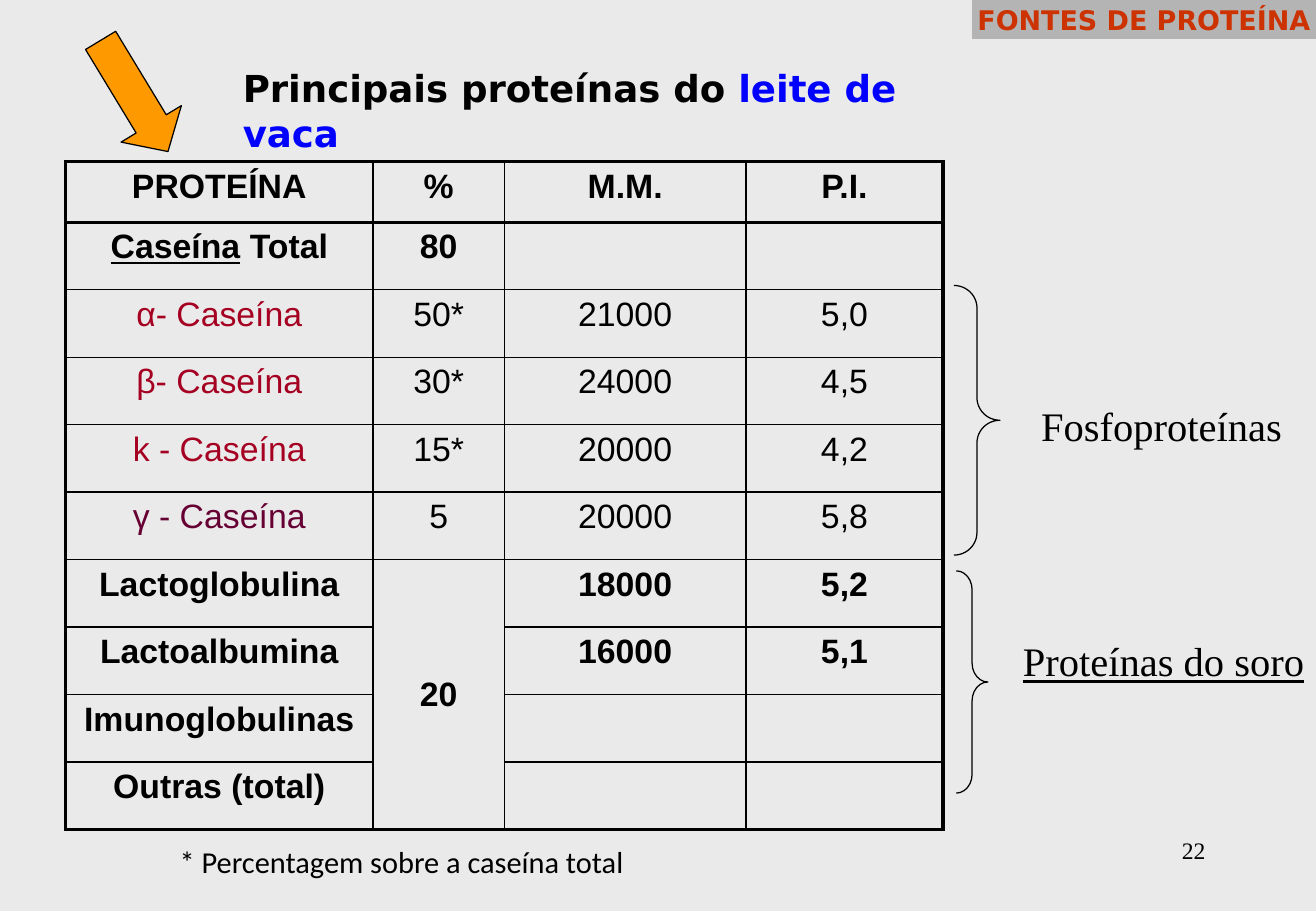
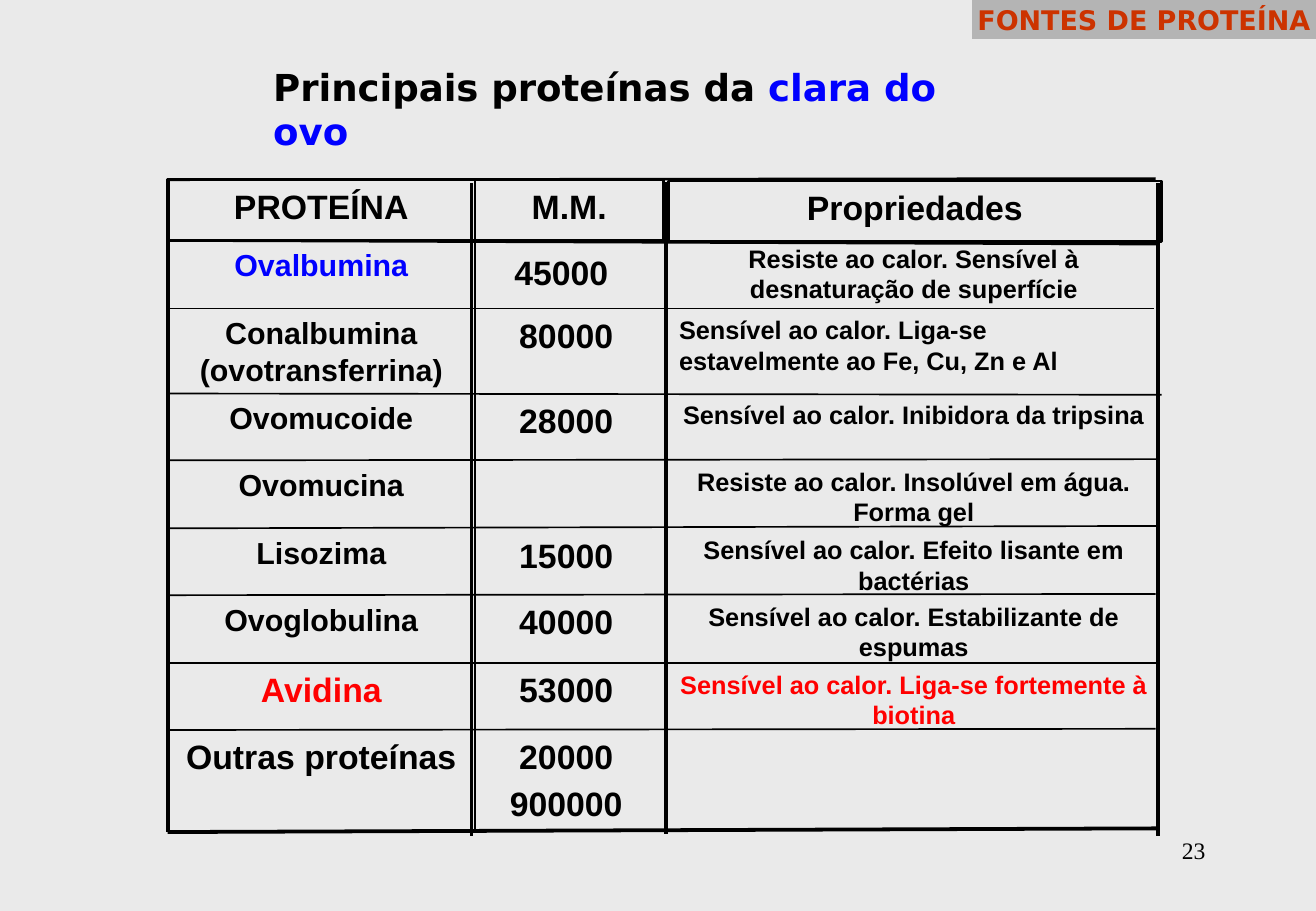
from dataclasses import dataclass

from lxml.etree import SubElement
from pptx import Presentation
from pptx.dml.color import RGBColor
from pptx.enum.shapes import MSO_CONNECTOR, MSO_SHAPE
from pptx.enum.text import MSO_ANCHOR, PP_ALIGN
from pptx.oxml.ns import qn
from pptx.util import Inches, Pt


@dataclass(frozen=True)
class Theme:
    # Colours
    background: str = "EAEAEA"
    black: str = "000000"
    grey: str = "808080"
    rust: str = "CC3300"
    blue: str = "0000FF"
    red: str = "FF0000"
    orange: str = "FF9900"
    crimson: str = "A50021"
    plum: str = "660033"
    # Fonts
    heading: str = "DejaVu Sans"
    body: str = "Arial"
    serif: str = "Times New Roman"
    note: str = "Calibri"
    # Type sizes in points
    title_size: int = 22
    banner_size: int = 16
    label_size: int = 24
    cell_size: int = 20
    name_size: int = 18
    property_size: int = 15
    number_size: int = 14
    # Line widths in points
    thin: float = 1
    medium: float = 1.5
    thick: float = 2.25
    outline: float = 0.75


T = Theme()


def rgb(colour):
    return RGBColor.from_string(colour)


class Deck:
    """Holds the presentation, its style and the current slide."""

    def __init__(self, width, height):
        self.prs = Presentation()
        self.prs.slide_width, self.prs.slide_height = Inches(width), Inches(height)
        fill = self.prs.slide_master.background.fill
        fill.solid()
        fill.fore_color.rgb = rgb(T.background)
        self.s = None

    def new_slide(self, number, title, title_box):
        """Start a slide with its number, two-colour title and corner banner."""
        self.s = self.prs.slides.add_slide(self.prs.slide_layouts[6])
        self.text((7.76, 6.83, 2.26, 0.5), str(number), align=PP_ALIGN.RIGHT,
                  font=T.serif, size=T.number_size)
        lead, topic = title
        self.text(title_box, [(lead, {}), (topic, {"colour": T.blue})],
                  font=T.heading, size=T.title_size, bold=True)
        sp = self.shape(MSO_SHAPE.RECTANGLE, (8, 0, 2.83, 0.32), fill=T.grey)
        colour = sp._element.spPr.find(qn("a:solidFill"))[0]
        SubElement(colour, qn("a:alpha"), val="50000")
        tf = sp.text_frame
        tf.word_wrap, tf.vertical_anchor = False, MSO_ANCHOR.MIDDLE
        self.put_text(tf, "FONTES DE PROTEÍNA", align=PP_ALIGN.CENTER,
                      font=T.heading, size=T.banner_size, bold=True, colour=T.rust)

    def put_text(self, tf, content, align=PP_ALIGN.LEFT, spaced=False, **style):
        """Fill a frame: each line of a string, or one list of (text, style) runs."""
        if isinstance(content, str):
            paragraphs = [[(line, {})] for line in content.split("\n")]
        else:
            paragraphs = [content]
        for i, runs in enumerate(paragraphs):
            p = tf.add_paragraph() if i else tf.paragraphs[0]
            p.alignment = align
            if spaced:  # 20 % of the line before each paragraph
                before = SubElement(p._p.get_or_add_pPr(), qn("a:spcBef"))
                SubElement(before, qn("a:spcPct"), val="20000")
            for text, extra in runs:
                r = p.add_run()
                r.text = text
                look = {"font": T.body, "size": T.cell_size, "bold": False,
                        "underline": False, "colour": T.black} | style | extra
                r.font.color.rgb = rgb(look["colour"])
                values = {"name": look["font"], "size": Pt(look["size"]),
                          "bold": look["bold"], "underline": look["underline"]}
                for name, value in values.items():
                    setattr(r.font, name, value)

    def text(self, box, content, wrap=True, **style):
        tf = self.s.shapes.add_textbox(*map(Inches, box)).text_frame
        tf.word_wrap = wrap
        self.put_text(tf, content, **style)

    def shape(self, kind, box, fill=None, line=None, adjust=(), rotation=0):
        sp = self.s.shapes.add_shape(kind, *map(Inches, box))
        sp.shadow.inherit = False
        sp.rotation = rotation
        for i, value in enumerate(adjust):
            sp.adjustments[i] = value
        if fill:
            sp.fill.solid()
            sp.fill.fore_color.rgb = rgb(fill)
        else:
            sp.fill.background()
        if line:
            sp.line.color.rgb = rgb(T.black)
            sp.line.width = Pt(line)
        else:
            sp.line.fill.background()
        return sp

    def line(self, x1, y1, x2, y2, width):
        c = self.s.shapes.add_connector(
            MSO_CONNECTOR.STRAIGHT, *map(Inches, (x1, y1, x2, y2)))
        c.line.color.rgb = rgb(T.black)
        c.line.width = Pt(width)
        SubElement(c._element.spPr, qn("a:effectLst"))

    def table(self, box, widths, header_height, rows, merges=()):
        """Rows hold (content, style) cells; outer and header rules are thick."""
        n, m = len(rows), len(widths)
        tbl = self.s.shapes.add_table(n, m, *map(Inches, box)).table
        tbl.first_row = tbl.horz_banding = False
        for column, width in zip(tbl.columns, widths):
            column.width = Inches(width)
        row_height = (box[3] - header_height) / (n - 1)
        for i, row in enumerate(tbl.rows):
            row.height = Inches(row_height if i else header_height)
        for top, left, bottom, right in merges:
            tbl.cell(top, left).merge(tbl.cell(bottom, right))
            tbl.cell(top, left).vertical_anchor = MSO_ANCHOR.MIDDLE
        for i, row in enumerate(rows):
            for j, (content, style) in enumerate(row):
                cell = tbl.cell(i, j)
                if cell.is_spanned:
                    continue
                if content:
                    self.put_text(cell.text_frame, content, align=PP_ALIGN.CENTER,
                                  spaced=True, **style)
                end = i + (cell.span_height if cell.is_merge_origin else 1)
                self.borders(cell, {"L": j == 0, "R": j == m - 1,
                                    "T": i < 2, "B": end in (1, n)})
                cell.fill.background()

    def borders(self, cell, thick_sides):
        tcPr = cell._tc.get_or_add_tcPr()
        for side, is_thick in thick_sides.items():
            width = Pt(T.thick if is_thick else T.thin)
            ln = SubElement(tcPr, qn(f"a:ln{side}"), w=str(int(width)))
            SubElement(SubElement(ln, qn("a:solidFill")), qn("a:srgbClr"), val=T.black)


def milk_slide(deck):
    deck.new_slide(22, ("Principais proteínas do ", "leite de vaca"),
                   (1.9, 0.49, 6.41, 0.47))

    # Protein table: row texts, bold flag, colour of the name
    data = [
        (("PROTEÍNA", "%", "M.M.", "P.I."), True, T.black),
        (([("Caseína", {"underline": True}), (" Total", {})], "80", "", ""),
         True, T.black),
        (("α- Caseína", "50*", "21000", "5,0"), False, T.crimson),
        (("β- Caseína", "30*", "24000", "4,5"), False, T.crimson),
        (("k - Caseína", "15*", "20000", "4,2"), False, T.crimson),
        (("γ - Caseína", "5", "20000", "5,8"), False, T.plum),
        (("Lactoglobulina", "20", "18000", "5,2"), True, T.black),
        (("Lactoalbumina", "", "16000", "5,1"), True, T.black),
        (("Imunoglobulinas", "", "", ""), True, T.black),
        (("Outras (total)", "", "", ""), True, T.black),
    ]
    rows = [[(text, {"bold": bold, "colour": T.black if j else colour})
             for j, text in enumerate(texts)] for texts, bold, colour in data]
    deck.table((0.54, 1.33, 7.22, 5.5), (2.53, 1.08, 1.99, 1.62), 0.5, rows,
               merges=[(6, 1, 9, 1)])
    deck.text((1.38, 6.89, 4.02, 0.4), "* Percentagem sobre a caseína total",
              wrap=False, font=T.note, size=T.name_size)

    # Arrow to the table
    deck.shape(MSO_SHAPE.LEFT_ARROW, (0.57, 0.5, 1.07, 0.58), fill=T.orange,
               line=T.outline, adjust=(0.5, 0.46), rotation=238.8)

    # Braces and their labels
    groups = [
        ((7.85, 2.35, 0.38, 2.22), 0.49,
         (8.47, 3.25, 2.18, 0.5), "Fosfoproteínas", False),
        ((7.87, 4.7, 0.26, 1.83), 0.6,
         (8.32, 5.19, 2.52, 0.5), "Proteínas do soro", True),
    ]
    for brace_box, curve, label_box, label, underline in groups:
        deck.shape(MSO_SHAPE.RIGHT_BRACE, brace_box, line=T.outline,
                   adjust=(curve, 0.5))
        deck.text(label_box, label, wrap=False, font=T.serif,
                  size=T.label_size, underline=underline)


def egg_slide(deck):
    deck.new_slide(23, ("Principais proteínas da ", "clara do ovo"),
                   (2.15, 0.48, 6.34, 0.47))
    centred = {"align": PP_ALIGN.CENTER, "spaced": True, "bold": True}
    columns = [(1.38, 2.53), (3.94, 1.44), (5.49, 4.06)]
    tops = [1.98, 2.54, 3.24, 3.79, 4.35, 4.9, 5.46, 6.01, 6.84]

    # Protein rows: name, molar mass, properties, size and colours
    big, small = T.cell_size, T.name_size
    rows = [
        ("Ovalbumina", "45000",
         "Resiste ao calor. Sensível à desnaturação de superfície",
         small, T.blue, T.black),
        ("Conalbumina (ovotransferrina)", "80000",
         "Sensível ao calor. Liga-se estavelmente ao Fe, Cu, Zn e Al",
         small, T.black, T.black),
        ("Ovomucoide", "28000", "Sensível ao calor. Inibidora da tripsina",
         small, T.black, T.black),
        ("Ovomucina", "", "Resiste ao calor. Insolúvel em água. Forma gel",
         small, T.black, T.black),
        ("Lisozima", "15000", "Sensível ao calor. Efeito lisante em bactérias",
         small, T.black, T.black),
        ("Ovoglobulina", "40000", "Sensível ao calor. Estabilizante de espumas",
         small, T.black, T.black),
        ("Avidina", "53000", "Sensível ao calor. Liga-se fortemente à biotina",
         big, T.red, T.red),
        ("Outras proteínas", "20000\n900000", "", big, T.black, T.black),
    ]
    offsets = {(0, 1): (-0.04, 0.04), (0, 2): (0, -0.03)}
    for i, (name, mass, properties, size, name_colour, colour) in enumerate(rows):
        cells = [(name, size, name_colour), (mass, big, T.black),
                 (properties, T.property_size, colour)]
        for j, (text, cell_size, cell_colour) in enumerate(cells):
            if not text:
                continue
            dx, dy = offsets.get((i, j), (0, 0))
            left, width = columns[j]
            look = centred | {"size": cell_size, "colour": cell_colour}
            if (i, j) == (1, 2):
                look["align"] = PP_ALIGN.LEFT
            deck.text((left + dx, tops[i] + dy, width, tops[i + 1] - tops[i]),
                      text, **look)

    # Header boxes
    for left, top, width, label in [(5.5, 1.49, 4.06, "Propriedades"),
                                    (3.91, 1.48, 1.55, "M.M."),
                                    (1.38, 1.48, 2.53, "PROTEÍNA")]:
        sp = deck.shape(MSO_SHAPE.RECTANGLE, (left, top, width, 0.5), line=T.medium)
        sp.text_frame.word_wrap = True
        sp.text_frame.vertical_anchor = MSO_ANCHOR.TOP
        deck.put_text(sp.text_frame, label, **centred)

    # Horizontal rules: left y, right end, width
    for y, x_end, y_end, width in [
            (1.48, 9.51, 1.47, T.medium), (1.98, 9.54, 2.01, T.medium),
            (2.54, 9.5, 2.54, T.thin), (3.24, 9.56, 3.25, T.thin),
            (3.79, 9.53, 3.78, T.thin), (4.35, 9.53, 4.33, T.thin),
            (4.9, 9.51, 4.89, T.thin), (5.46, 9.53, 5.46, T.thin),
            (6.01, 9.51, 6, T.thin), (6.85, 9.53, 6.82, T.thick)]:
        deck.line(1.38, y, x_end, y_end, width)

    # Vertical rules: all of one length
    for x, top, width in [(1.38, 1.48, T.thick), (3.91, 1.48, T.thin),
                          (9.53, 1.51, T.thick), (5.48, 1.5, T.thick),
                          (3.88, 1.51, T.thick)]:
        deck.line(x, top, x, top + 5.37, width)


def main():
    deck = Deck(10.83, 7.5)
    milk_slide(deck)
    egg_slide(deck)
    deck.prs.save("out.pptx")


if __name__ == "__main__":
    main()
